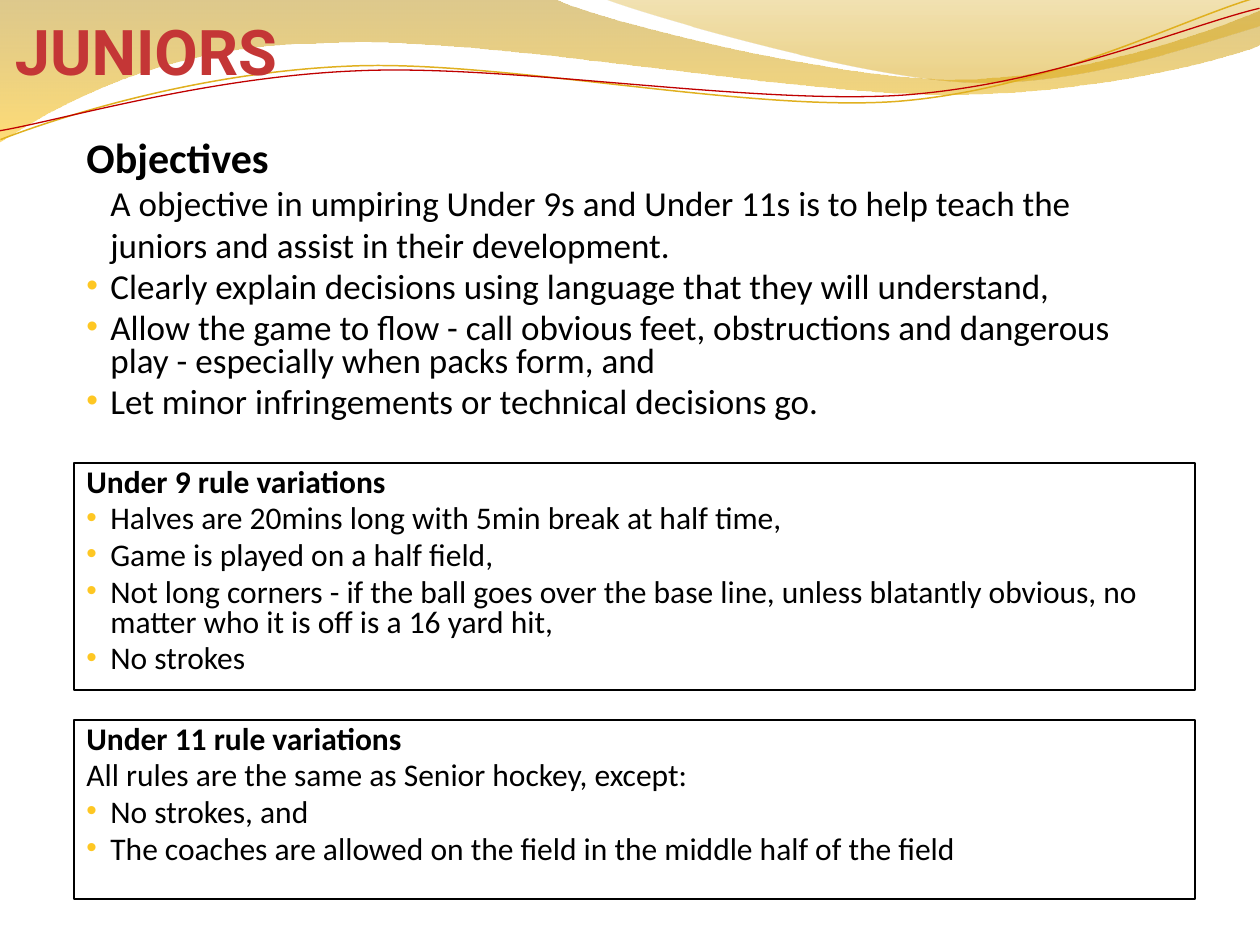
import dataclasses

import lxml.etree
import pptx
import pptx.dml.color
import pptx.enum.shapes
import pptx.enum.text
import pptx.oxml.ns
import pptx.util

EMU_PER_PX = 914400 / 126
HANGING = 24  # px, bullet indent
SWOOSH_TILT = -2.7  # degrees


@dataclasses.dataclass(frozen=True)
class Theme:
    font: str = "Calibri"
    title_font: str = "Roboto"
    text: str = "000000"
    title: str = "C43636"
    bullet: str = "FEC723"
    gold_line: str = "E0B01F"
    red_line: str = "C00000"
    # Gradient stops: position, colour, opacity in percent
    band: tuple = ((0, "B58700", 45), (1, "FFC107", 55))
    corner: tuple = ((0, "D49F02", 30), (0.8, "D7A100", 45))
    title_size: int = 36
    heading_size: int = 24
    body_size: int = 20
    rules_size: int = 18


THEME = Theme()

# Outlines in px: one point is a straight edge, three points are a Bézier curve
BAND = [
    [(0, -1)], [(554, -1)],
    [(600, 21), (837, 79), (955, 79)], [(1075, 79), (1207, 33), (1260, 11)],
    [(1261, 45)],
    [(1239, 55), (1096, 96), (940, 94)], [(784, 94), (481, 35), (324, 43)],
    [(163, 44), (58, 105), (-1, 142)], [(0, -1)],
]
CORNER = [
    [(604, -1)],
    [(641, 14), (859, 78), (969, 82)], [(1079, 87), (1211, 40), (1260, 26)],
    [(1260, 0)], [(604, -1)],
]
# The two swooshes are given level, before their tilt
GOLD_LINE = [
    [(-2, 110)],
    [(58, 90), (199, 52), (350, 53)], [(499, 53), (745, 118), (896, 114)],
    [(1049, 109), (1184, 45), (1260, 27)],
]
RED_LINE = [
    [(-2, 101)],
    [(57, 94), (207, 57), (357, 58)], [(509, 58), (750, 111), (902, 108)],
    [(1052, 104), (1188, 52), (1262, 38)],
]

# Each line of text: style, wording
OBJECTIVES = [
    ("heading", "Objectives"),
    ("intro", "A objective in umpiring Under 9s and Under 11s is to help teach "
              "the juniors and assist in their development."),
    ("bullet", "Clearly explain decisions using language that they will understand,"),
    ("bullet", "Allow the game to flow - call obvious feet, obstructions and "
               "dangerous play - especially when packs form, and"),
    ("bullet", "Let minor infringements or technical decisions go."),
]
UNDER_9 = [
    ("label", "Under 9 rule variations"),
    ("bullet", "Halves are 20mins long with 5min break at half time,"),
    ("bullet", "Game is played on a half field,"),
    ("bullet", "Not long corners - if the ball goes over the base line, unless "
               "blatantly obvious, no matter who it is off is a 16 yard hit,"),
    ("bullet", "No strokes"),
]
UNDER_11 = [
    ("label", "Under 11 rule variations"),
    ("plain", "All rules are the same as Senior hockey, except:"),
    ("bullet", "No strokes, and"),
    ("bullet", "The coaches are allowed on the field in the middle half of the field"),
]


def px(length):
    return pptx.util.Emu(round(length * EMU_PER_PX))


def rgb(colour):
    return pptx.dml.color.RGBColor.from_string(colour)


def bend_edges(outline, segments):
    """Join each run of three straight edges that stands for a curve."""
    edges = outline._element.spPr.iter(pptx.oxml.ns.qn("a:lnTo"))
    edges = iter(list(edges))
    for segment in segments[1:]:
        group = [next(edges) for _ in segment]
        if len(group) == 3:
            curve = lxml.etree.Element(pptx.oxml.ns.qn("a:cubicBezTo"))
            group[0].addprevious(curve)
            for edge in group:
                curve.append(edge[0])
                edge.getparent().remove(edge)


def add_outline(slide, segments, close):
    start, *rest = [(px(x), px(y)) for segment in segments for x, y in segment]
    builder = slide.shapes.build_freeform(*start, scale=1.0)
    builder.add_line_segments(rest, close=close)
    outline = builder.convert_to_shape()
    bend_edges(outline, segments)
    outline.shadow.inherit = False
    return outline


def add_wave(slide, segments, stops):
    wave = add_outline(slide, segments, close=True)
    wave.line.fill.background()
    wave.fill.gradient()
    wave.fill.gradient_angle = 270
    for stop, (position, colour, opacity) in zip(wave.fill.gradient_stops, stops):
        stop.position = position
        stop.color.rgb = rgb(colour)
    # Opacity of each gradient stop
    tints = wave._element.spPr.iter(pptx.oxml.ns.qn("a:srgbClr"))
    for tint, (position, colour, opacity) in zip(tints, stops):
        alpha = lxml.etree.SubElement(tint, pptx.oxml.ns.qn("a:alpha"))
        alpha.set("val", str(opacity * 1000))


def add_swoosh(slide, segments, colour, width):
    swoosh = add_outline(slide, segments, close=False)
    swoosh.rotation = SWOOSH_TILT
    swoosh.fill.background()
    swoosh.line.color.rgb = rgb(colour)
    swoosh.line.width = pptx.util.Pt(width)


def set_bullet(properties):
    colour = lxml.etree.SubElement(properties, pptx.oxml.ns.qn("a:buClr"))
    lxml.etree.SubElement(colour, pptx.oxml.ns.qn("a:srgbClr")).set("val", THEME.bullet)
    for tag, name, value in (("a:buSzPct", "val", "95000"),
                             ("a:buFont", "typeface", "Arial"),
                             ("a:buChar", "char", "•")):
        lxml.etree.SubElement(properties, pptx.oxml.ns.qn(tag)).set(name, value)


def set_font(paragraph, name, size, colour, bold):
    paragraph.font.name = name
    paragraph.font.size = pptx.util.Pt(size)
    paragraph.font.color.rgb = rgb(colour)
    paragraph.font.bold = bold


def write_lines(frame, lines, size):
    frame.word_wrap = True
    frame.vertical_anchor = pptx.enum.text.MSO_ANCHOR.TOP
    for index, (style, wording) in enumerate(lines):
        paragraph = frame.add_paragraph() if index else frame.paragraphs[0]
        paragraph.text = wording
        paragraph.alignment = pptx.enum.text.PP_ALIGN.LEFT
        properties = paragraph._p.get_or_add_pPr()
        properties.set("marL", str(px(HANGING)))
        properties.set("indent", str(0 if style == "intro" else -px(HANGING)))
        if style == "bullet":
            set_bullet(properties)
        if style not in ("heading", "intro"):
            paragraph.line_spacing = 0.8
            paragraph.space_before = pptx.util.Pt(size * 0.2)
        set_font(paragraph, THEME.font,
                 THEME.heading_size if style == "heading" else size,
                 THEME.text, style in ("heading", "label"))


def add_title(slide, wording, left, top, width, height):
    frame = slide.shapes.add_textbox(px(left), px(top), px(width), px(height)).text_frame
    frame.word_wrap = True
    frame.vertical_anchor = pptx.enum.text.MSO_ANCHOR.BOTTOM
    frame.margin_left = frame.margin_right = frame.margin_bottom = 0
    frame.text = wording
    set_font(frame.paragraphs[0], THEME.title_font, THEME.title_size, THEME.title, True)


def add_text(slide, lines, left, top, width, height):
    box = slide.shapes.add_textbox(px(left), px(top), px(width), px(height))
    write_lines(box.text_frame, lines, THEME.body_size)


def add_rules(slide, lines, left, top, width, height):
    box = slide.shapes.add_shape(pptx.enum.shapes.MSO_SHAPE.RECTANGLE,
                                 px(left), px(top), px(width), px(height))
    box.shadow.inherit = False
    box.fill.background()
    box.line.color.rgb = rgb(THEME.text)
    box.line.width = pptx.util.Pt(1.25)
    write_lines(box.text_frame, lines, THEME.rules_size)


def main():
    deck = pptx.Presentation()
    deck.slide_width, deck.slide_height = px(1260), px(945)
    slide = deck.slides.add_slide(deck.slide_layouts[6])

    # Header waves
    add_wave(slide, BAND, THEME.band)
    add_wave(slide, CORNER, THEME.corner)
    add_swoosh(slide, GOLD_LINE, THEME.gold_line, 0.85)
    add_swoosh(slide, RED_LINE, THEME.red_line, 0.75)

    # Title, objectives and rule boxes
    add_title(slide, "JUNIORS", 15, 0, 735, 88)
    add_rules(slide, UNDER_9, 74, 463, 1121, 227)
    add_text(slide, OBJECTIVES, 74, 125, 1111, 310)
    add_rules(slide, UNDER_11, 74, 720, 1121, 179)

    deck.save("out.pptx")


if __name__ == "__main__":
    main()
